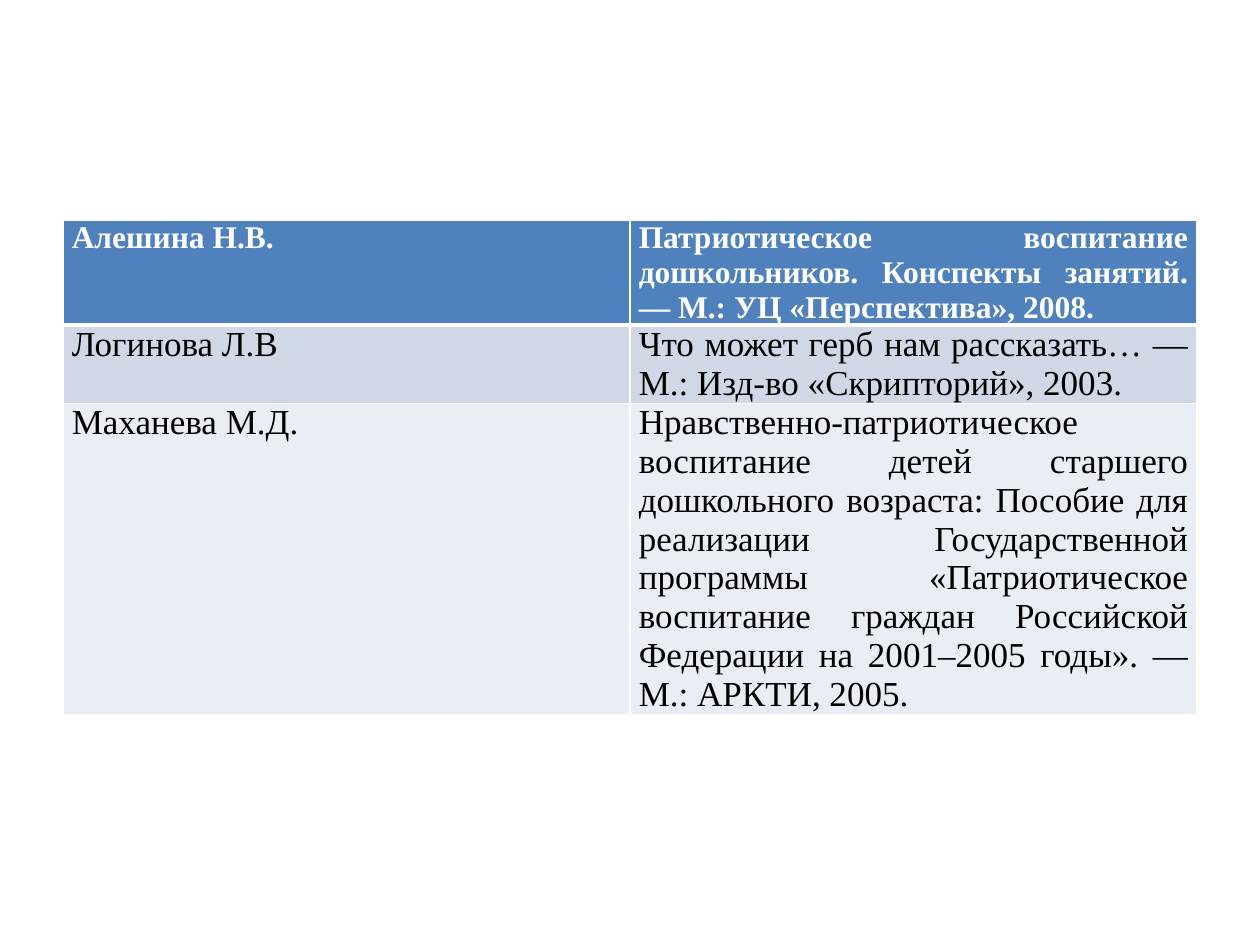
"""Build a slide with a table of books on patriotic education."""
from lxml.etree import SubElement
from pptx import Presentation
from pptx.dml.color import RGBColor
from pptx.enum.text import PP_ALIGN
from pptx.oxml.ns import qn
from pptx.util import Inches, Pt

COLORS = {"header": "4F81BD", "odd": "D0D8E8", "even": "E9EDF4",
          "white": "FFFFFF", "black": "000000"}
BOOKS = [
    ("Алешина Н.В.",
     "Патриотическое воспитание дошкольников. Конспекты занятий. "
     "— М.: УЦ «Перспектива», 2008."),
    ("Логинова Л.В",
     "Что может герб нам рассказать… — М.: Изд-во «Скрипторий», 2003."),
    ("Маханева М.Д.",
     "Нравственно-патриотическое воспитание детей старшего дошкольного "
     "возраста: Пособие для реализации Государственной программы "
     "«Патриотическое воспитание граждан Российской Федерации на "
     "2001–2005 годы». — М.: АРКТИ, 2005."),
]
HEADER_FONT = {"name": "Times New Roman", "size": Pt(18), "bold": True}
BODY_FONT = {"name": "Times New Roman", "size": Pt(20), "bold": False}
ROW_STYLES = [
    (0.82, "header", "white", HEADER_FONT),
    (0.62, "odd", "black", BODY_FONT),
    (2.47, "even", "black", BODY_FONT),
]
CELL_FORMAT = {"margin_left": Inches(0.07), "margin_right": Inches(0.07),
               "margin_top": 0, "margin_bottom": 0}


def add_border(cell, side, width):
    properties = cell._tc.get_or_add_tcPr()
    line = SubElement(properties, qn(f"a:ln{side}"), w=str(Pt(width)))
    fill = SubElement(line, qn("a:solidFill"))
    SubElement(fill, qn("a:srgbClr"), val=COLORS["white"])


presentation = Presentation()
presentation.slide_width = Inches(10)
presentation.slide_height = Inches(7.5)
slide = presentation.slides.add_slide(presentation.slide_layouts[6])

table_height = sum(style[0] for style in ROW_STYLES)
table = slide.shapes.add_table(
    len(BOOKS), 2, Inches(0.5), Inches(1.75), Inches(9), Inches(table_height)
).table

for row_index, (book, style) in enumerate(zip(BOOKS, ROW_STYLES)):
    height, fill_color, text_color, font_format = style
    table.rows[row_index].height = Inches(height)
    border_widths = {"L": 1, "R": 1, "T": 3 if row_index == 1 else 1,
                     "B": 3 if row_index == 0 else 1}
    for column_index, text in enumerate(book):
        cell = table.cell(row_index, column_index)
        for name, value in CELL_FORMAT.items():
            setattr(cell, name, value)
        for side, width in border_widths.items():
            add_border(cell, side, width)
        cell.fill.solid()
        cell.fill.fore_color.rgb = RGBColor.from_string(COLORS[fill_color])
        paragraph = cell.text_frame.paragraphs[0]
        paragraph.alignment = PP_ALIGN.JUSTIFY
        run = paragraph.add_run()
        run.text = text
        for name, value in font_format.items():
            setattr(run.font, name, value)
        run.font.color.rgb = RGBColor.from_string(COLORS[text_color])

presentation.save("out.pptx")
